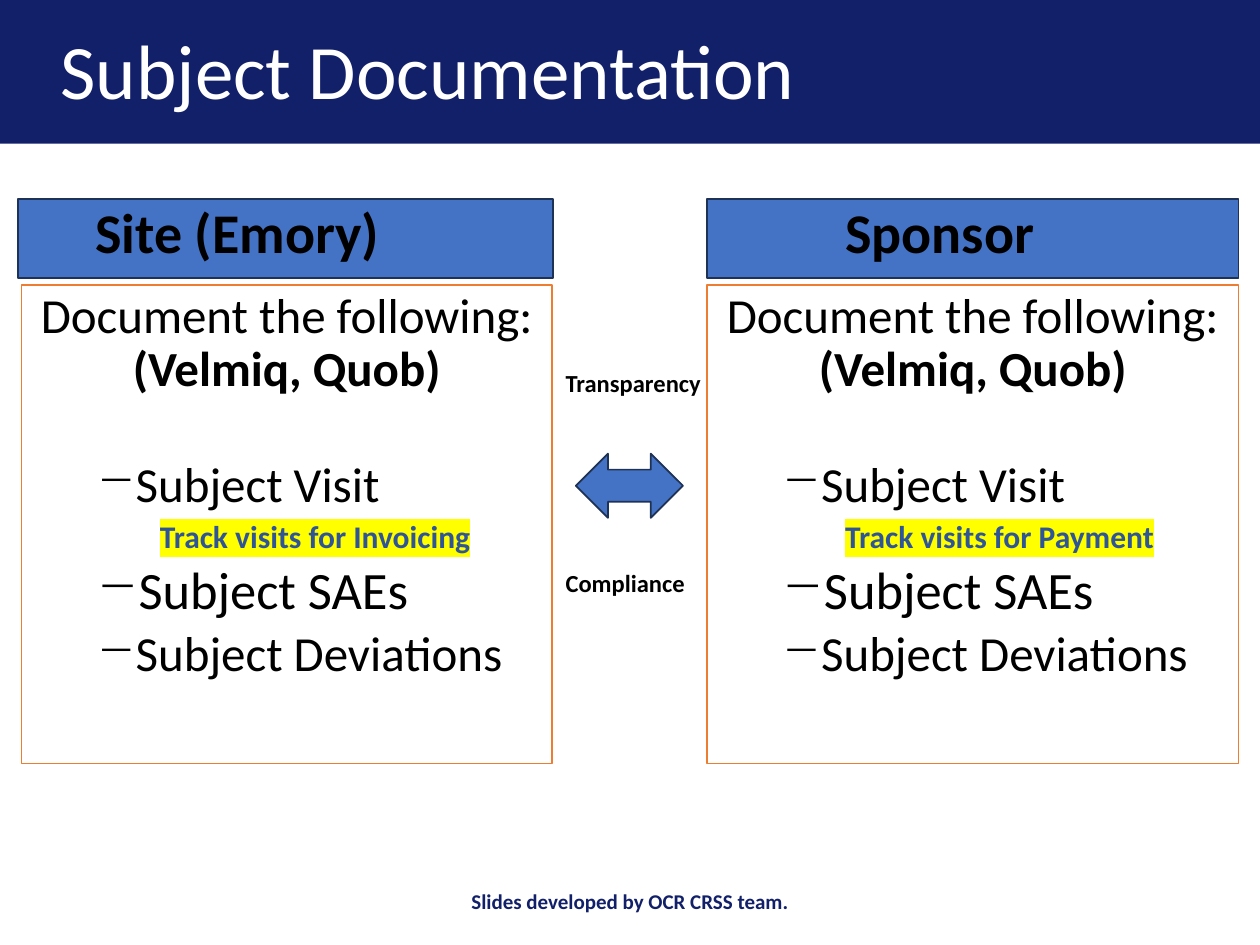
from dataclasses import dataclass
from typing import NamedTuple, Optional

from lxml.etree import SubElement
from pptx import Presentation
from pptx.dml.color import RGBColor
from pptx.enum.shapes import MSO_SHAPE
from pptx.enum.text import MSO_ANCHOR, PP_ALIGN
from pptx.oxml.ns import qn
from pptx.util import Inches, Pt


@dataclass(frozen=True)
class Theme:
    font: str = "Calibri"
    navy: str = "122069"
    blue: str = "4472C4"
    blue_edge: str = "1E3256"
    orange: str = "ED7D31"
    note: str = "2F5597"
    highlight: str = "FFFF00"
    white: str = "FFFFFF"
    black: str = "000000"
    title: int = 44
    heading: int = 32
    emphasis: int = 30
    body: int = 28
    remark: int = 18
    label: int = 14
    footer: int = 12


class Cell(NamedTuple):
    column: float
    row: float
    columns: float
    rows: float


class Party(NamedTuple):
    heading: str
    remark: str
    header: Cell
    panel: Cell
    heading_shift: float


class Item(NamedTuple):
    text: str
    size: int
    bullet: bool = True


THEME = Theme()
COLUMNS, ROWS = 100, 75
DECK_WIDTH, DECK_HEIGHT = Inches(10), Inches(7.5)

PARTIES = (
    Party("Site (Emory)", "Track visits for Invoicing",
          Cell(1.4, 15.8, 42.5, 6.3), Cell(1.7, 22.6, 42.1, 38), 7.6),
    Party("Sponsor", "Track visits for Payment",
          Cell(56.1, 15.8, 42.2, 6.3), Cell(56.1, 22.6, 42.2, 38), 5.2),
)
LABELS = (("Transparency", 28.7), ("Compliance", 44.6))


def across(columns: float) -> int:
    return round(DECK_WIDTH * columns / COLUMNS)


def down(rows: float) -> int:
    return round(DECK_HEIGHT * rows / ROWS)


def bounds(cell: Cell) -> tuple:
    return across(cell.column), down(cell.row), across(cell.columns), down(cell.rows)


def style(para, size: int, color: str = THEME.black, bold: bool = False,
          align: PP_ALIGN = PP_ALIGN.LEFT, spacing: Optional[float] = None) -> None:
    para.alignment = align
    if spacing:
        para.line_spacing = spacing
    para.font.name = THEME.font
    para.font.size = Pt(size)
    para.font.bold = bold
    para.font.color.rgb = RGBColor.from_string(color)


def add_box(page, kind: MSO_SHAPE, cell: Cell, fill: str, line: Optional[str] = None):
    box = page.shapes.add_shape(kind, *bounds(cell))
    box.shadow.inherit = False
    box.fill.solid()
    box.fill.fore_color.rgb = RGBColor.from_string(fill)
    if line:
        box.line.color.rgb = RGBColor.from_string(line)
        box.line.width = Pt(1)
    else:
        box.line.fill.background()
    box.text_frame.word_wrap = True
    box.text_frame.vertical_anchor = MSO_ANCHOR.TOP
    return box


def add_label(page, cell: Cell, text: str, size: int, color: str = THEME.black,
              align: PP_ALIGN = PP_ALIGN.LEFT,
              anchor: MSO_ANCHOR = MSO_ANCHOR.TOP) -> None:
    frame = page.shapes.add_textbox(*bounds(cell)).text_frame
    frame.word_wrap = True
    frame.vertical_anchor = anchor
    para = frame.paragraphs[0]
    para.text = text
    style(para, size, color, True, align)


def add_title(page, text: str) -> None:
    band = add_box(page, MSO_SHAPE.RECTANGLE, Cell(0, 0, COLUMNS, 11.4), THEME.navy)
    title = page.shapes.title
    title.element.addprevious(band.element)
    title.left, title.top, title.width, title.height = bounds(Cell(3.8, 0.8, 92.6, 10.2))
    title.text_frame.vertical_anchor = MSO_ANCHOR.MIDDLE
    para = title.text_frame.paragraphs[0]
    para.text = text
    style(para, THEME.title, THEME.white, spacing=0.9)


def add_item(frame, item: Item) -> None:
    para = frame.add_paragraph()
    para.level = 1 if item.bullet else 2
    properties = para._p.get_or_add_pPr()
    properties.set("marL", str(across(7.5 if item.bullet else 10)))
    properties.set("indent", str(across(-2.5) if item.bullet else 0))
    if item.bullet:
        SubElement(properties, qn("a:buChar")).set("char", "−")
    else:
        SubElement(properties, qn("a:buNone"))
    para.space_before = Pt(5)
    span = para.add_run()
    span.text = item.text
    style(para, item.size, THEME.black if item.bullet else THEME.note,
          not item.bullet, spacing=0.9)
    if not item.bullet:
        mark = SubElement(span.font._element, qn("a:highlight"))
        SubElement(mark, qn("a:srgbClr")).set("val", THEME.highlight)


def add_panel(page, party: Party) -> None:
    frame = add_box(page, MSO_SHAPE.RECTANGLE, party.panel, THEME.white, THEME.orange).text_frame
    intro = frame.paragraphs[0]
    intro.add_run().text = "Document the following: "
    systems = intro.add_run()
    systems.text = "(Velmiq, Quob)"
    style(intro, THEME.body, align=PP_ALIGN.CENTER, spacing=0.9)
    systems.font.bold = True
    intro.space_after = Pt(31)
    for item in (Item("Subject Visit", THEME.body),
                 Item(party.remark, THEME.remark, False),
                 Item("Subject SAEs", THEME.emphasis),
                 Item("Subject Deviations", THEME.body)):
        add_item(frame, item)


def add_header(page, party: Party) -> None:
    frame = add_box(page, MSO_SHAPE.RECTANGLE, party.header, THEME.blue, THEME.blue_edge).text_frame
    frame.margin_right = across(1 + party.heading_shift)
    para = frame.paragraphs[0]
    para.text = party.heading
    style(para, THEME.heading, bold=True, align=PP_ALIGN.CENTER, spacing=0.9)


def main() -> None:
    deck = Presentation()
    deck.slide_width, deck.slide_height = DECK_WIDTH, DECK_HEIGHT
    page = deck.slides.add_slide(deck.slide_layouts.get_by_name("Title Only"))
    add_title(page, "Subject Documentation")
    for party in PARTIES:
        add_panel(page, party)
    for text, row in LABELS:
        add_label(page, Cell(43.9, row, 15.9, 3.4), text, THEME.label)
    add_box(page, MSO_SHAPE.LEFT_RIGHT_ARROW, Cell(45.7, 36, 8.5, 5.1),
            THEME.blue, THEME.blue_edge)
    for party in PARTIES:
        add_header(page, party)
    add_label(page, Cell(33.1, 69.5, 33.8, 4), "Slides developed by OCR CRSS team.",
              THEME.footer, THEME.navy, PP_ALIGN.CENTER, MSO_ANCHOR.MIDDLE)
    deck.save("out.pptx")


if __name__ == "__main__":
    main()
